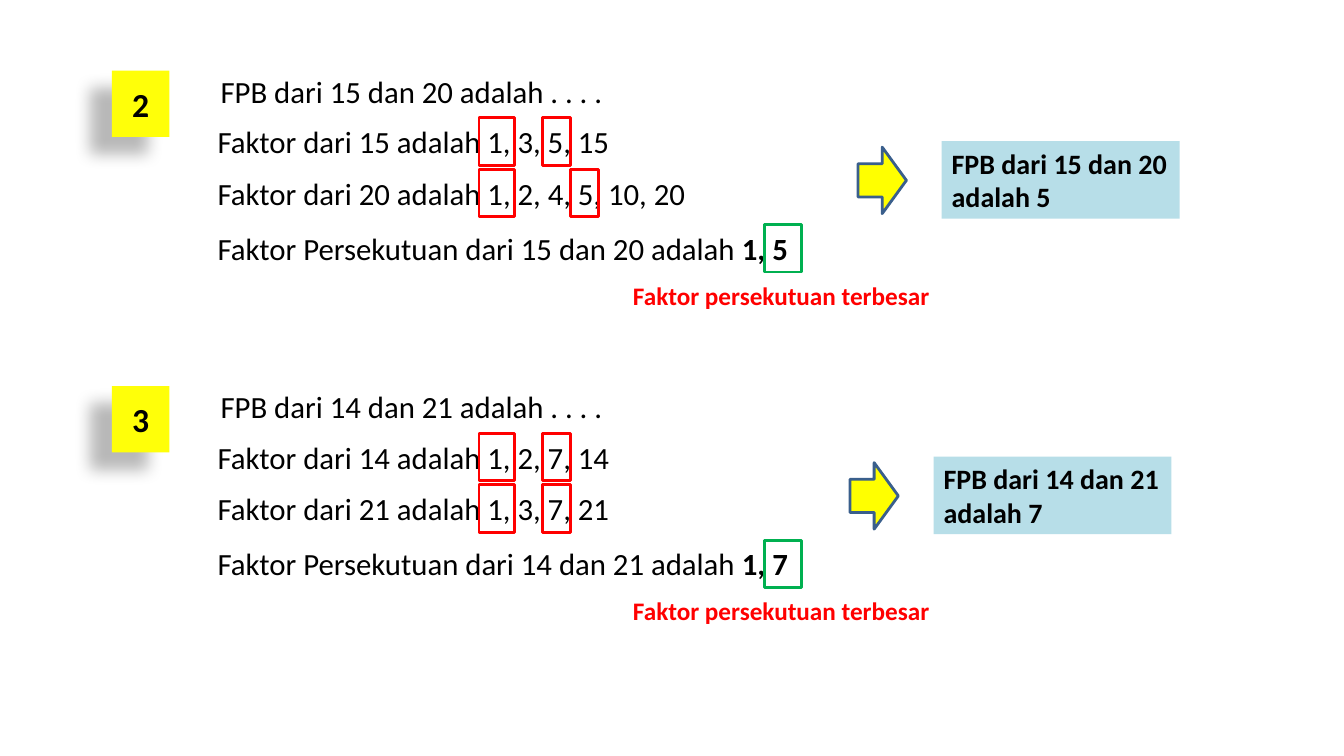
from lxml import etree
from pptx import Presentation
from pptx.dml.color import RGBColor
from pptx.enum.shapes import MSO_SHAPE
from pptx.enum.text import MSO_ANCHOR, MSO_AUTO_SIZE, PP_ALIGN
from pptx.oxml.ns import qn
from pptx.util import Inches, Pt

RECTANGLE, ARROW = MSO_SHAPE.RECTANGLE, MSO_SHAPE.RIGHT_ARROW
TOP, MIDDLE = MSO_ANCHOR.TOP, MSO_ANCHOR.MIDDLE
GROW, FIXED = MSO_AUTO_SIZE.SHAPE_TO_FIT_TEXT, MSO_AUTO_SIZE.NONE
LEFT, CENTER = PP_ALIGN.LEFT, PP_ALIGN.CENTER
BLACK, RED, GREEN, YELLOW = "000000", "FF0000", "00B050", "FFFF00"
LINE_HEIGHT = 0.47
PROBLEM_PITCH = 3.13

prs = Presentation()
prs.slide_width, prs.slide_height = Inches(13.33), Inches(7.5)
slide = prs.slides.add_slide(prs.slide_layouts[6])


def add_block(box, kind=None, fill=None, outline=None):
    place = [Inches(length) for length in box]
    if kind is None:
        return slide.shapes.add_textbox(*place)
    block = slide.shapes.add_shape(kind, *place)
    block.shadow.inherit = False
    if fill:
        block.fill.solid()
        block.fill.fore_color.rgb = RGBColor.from_string(fill)
    else:
        block.fill.background()
    if outline:
        block.line.color.rgb = RGBColor.from_string(outline)
        block.line.width = Pt(2)
    else:
        block.line.fill.background()
    return block


def write(block, runs, size, color=BLACK, wrap=False, anchor=TOP, fit=GROW, align=LEFT):
    frame = block.text_frame
    layout = {"word_wrap": wrap, "auto_size": fit, "vertical_anchor": anchor}
    for key, value in layout.items():
        setattr(frame, key, value)
    paragraph = frame.paragraphs[0]
    paragraph.alignment = align
    for text, bold in runs:
        run = paragraph.add_run()
        run.text = text
        for key, value in {"name": "Calibri", "size": Pt(size), "bold": bold}.items():
            setattr(run.font, key, value)
        run.font.color.rgb = RGBColor.from_string(color)


problems = [
    {"number": "2", "pair": (15, 20), "fpb": 5, "arrow_left": 8.51,
     "factors": ("1, 3, 5, 15", "1, 2, 4, 5, 10, 20"), "fpb_lefts": (5.38, 5.66)},
    {"number": "3", "pair": (14, 21), "fpb": 7, "arrow_left": 8.43,
     "factors": ("1, 2, 7, 14", "1, 3, 7, 21"), "fpb_lefts": (5.38, 5.38)},
]

for index, problem in enumerate(problems):
    offset = index * PROBLEM_PITCH
    first, second = problem["pair"]
    pair = f"{first} dan {second}"
    fpb = problem["fpb"]

    question = add_block((2.09, 0.67 + offset, 4.03, LINE_HEIGHT))
    write(question, [(f"FPB dari {pair} adalah . . . .", False)], 22)

    rows = zip((1.17, 1.68), problem["pair"], problem["factors"], problem["fpb_lefts"])
    for row_top, number, factors, fpb_left in rows:
        top = row_top + offset
        width = 4.89 if len(factors) > 11 else 4.13
        factor_line = add_block((2.06, top, width, LINE_HEIGHT))
        write(factor_line, [(f"Faktor dari {number} adalah {factors}", False)], 22)
        for mark_left, mark_width in ((4.75, 0.35), (fpb_left, 0.28)):
            add_block((mark_left, top, mark_width, LINE_HEIGHT), RECTANGLE, outline=RED)

    common_factors = add_block((2.06, 2.23 + offset, 5.91, LINE_HEIGHT))
    write(common_factors, [(f"Faktor Persekutuan dari {pair} adalah ", False),
                           (f"1, {fpb}", True)], 22)
    add_block((7.58, 2.23 + offset, 0.37, LINE_HEIGHT), RECTANGLE, outline=GREEN)

    arrow_left = problem["arrow_left"]
    answer = add_block((arrow_left + 0.83, 1.4 + offset, 2.36, 0.77), RECTANGLE, "B7DEE8")
    write(answer, [(f"FPB dari {pair} adalah {fpb}", True)], 20, wrap=True)
    add_block((arrow_left, 1.46 + offset, 0.48, 0.66), ARROW, YELLOW, "3A5F8C")

    caption = add_block((6.18, 2.73 + offset, 3.16, 0.4))
    write(caption, [("Faktor persekutuan terbesar", True)], 18, RED)

    badge = add_block((1.11, 0.7 + offset, 0.57, 0.66), RECTANGLE, "FFFF09")
    write(badge, [(problem["number"], True)], 24,
          wrap=True, anchor=MIDDLE, fit=FIXED, align=CENTER)
    effects = badge.element.spPr.find(qn("a:effectLst"))
    shadow = etree.SubElement(effects, qn("a:outerShdw"), blurRad=str(Pt(11.8)),
                              dist=str(Pt(19.7)), dir=str(141 * 60000),
                              algn="ctr", rotWithShape="0")
    shade = etree.SubElement(shadow, qn("a:srgbClr"), val=BLACK)
    etree.SubElement(shade, qn("a:alpha"), val="28000")

prs.save("out.pptx")
